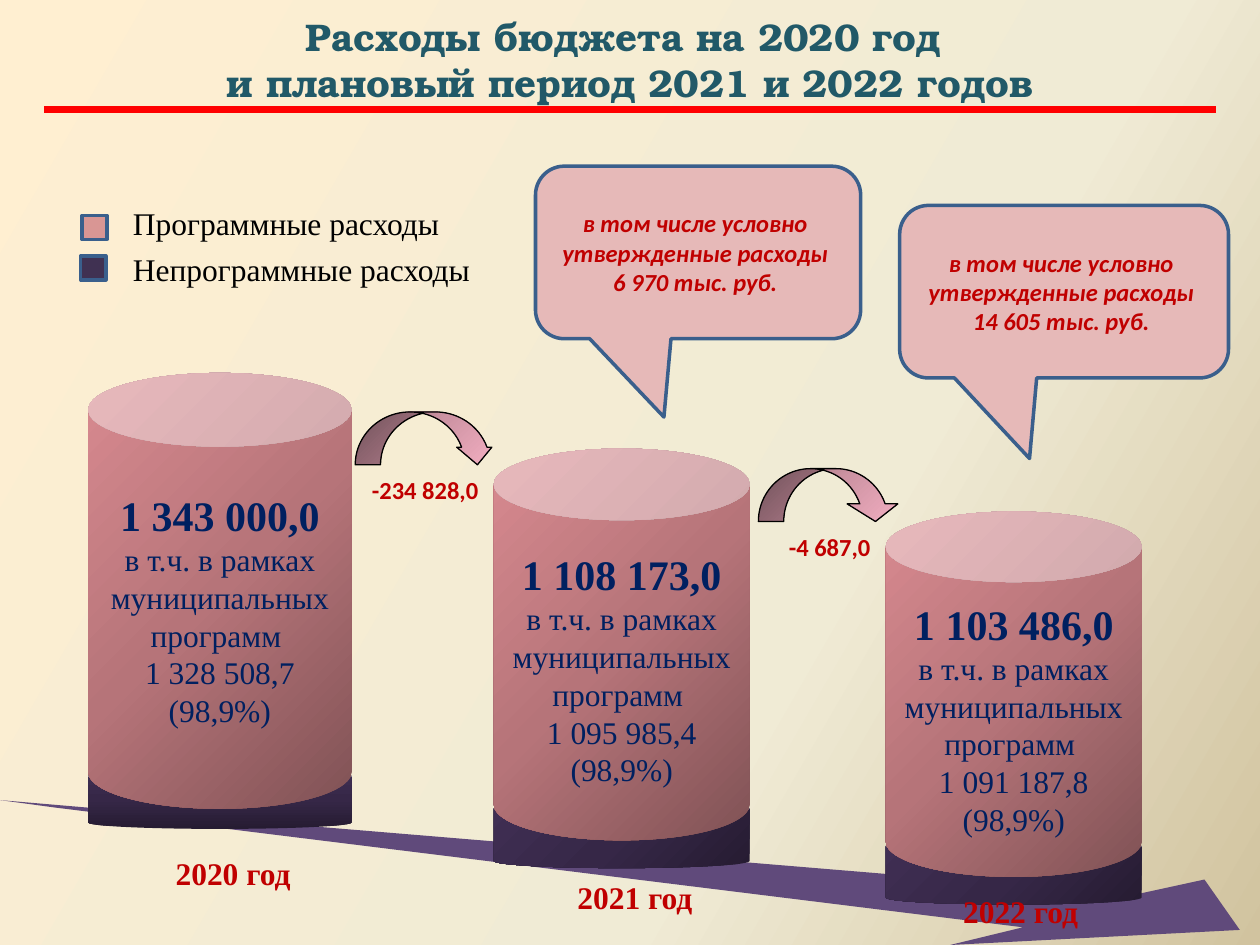
from dataclasses import dataclass

import pptx
import pptx.dml.color
import pptx.enum.shapes
import pptx.enum.text
import pptx.oxml.ns
import pptx.oxml.xmlchemy
import pptx.util
from lxml import etree

Pt = pptx.util.Pt
SHAPE = pptx.enum.shapes.MSO_SHAPE
ALIGN = pptx.enum.text.PP_ALIGN
qn = pptx.oxml.ns.qn


@dataclass(frozen=True)
class Theme:
    serif: str = "Times New Roman"
    sans: str = "Calibri"
    heading: str = "TeX Gyre Bonum"
    title_size: int = 22
    total_size: int = 24
    body_size: int = 18
    note_size: int = 14
    title: str = "215968"
    accent: str = "C00000"
    body: str = "002060"
    black: str = "000000"
    rule: str = "FF0000"
    outline: str = "3A5F8C"
    callout: str = "E6B9B8"
    ribbon: str = "604A7B"
    program: str = "D99694"
    other: str = "403152"
    background: tuple = ((0, "FFEFD1"), (65, "F0EBD5"), (100, "D1C39F"))
    program_can: tuple = ((0, "805255"), (50, "B67479"), (100, "D88A90"))
    other_can: tuple = ((0, "261C32"), (50, "362747"), (100, "402F54"))
    arrow: tuple = ((0, "906772"), (50, "CD93A3"), (100, "F3AEC1"))


T = Theme()

# year, left, width, program top and height, cap, text shift,
# other top and height, gradient angle, label left and top, total, share lines
YEARS = [
    ("2020 год", 50.4, 150.5, 213.1, 249.1, 0.28, 0, 439.9, 33.8, 270, 85, 484.6,
     "1 343 000,0", "1 328 508,7"),
    ("2021 год", 282.2, 146.2, 256.3, 223.9, 0.28, 7, 457.9, 38.2, 225, 314.6, 498.2,
     "1 108 173,0", "1 095 985,4"),
    ("2022 год", 506.2, 146.2, 292.3, 208.8, 0.276, 7, 479.5, 37.4, 225, 535, 506.2,
     "1 103 486,0", "1 091 187,8"),
]
CHANGES = [
    ("-234 828,0", 203, 235.4, 79.9, 0.667),
    ("-4 687,0", 433.4, 267.8, 81.4, 0.96),
]
CALLOUTS = [
    ("6 970 тыс. руб. ", 306, 95, 185.8, 0.954),
    ("14 605 тыс. руб. ", 514.1, 117.4, 187.9, 0.967),
]
LEGEND = [
    ("Программные расходы", T.program, 46.8, 123.1, 127.4),
    ("Непрограммные расходы", T.other, 46.1, 146.2, 153.7),
]
RIBBON = [(67.7, 463), (0, 457.2), (31.7, 461.5), (584.6, 529.9), (542.9, 540),
          (708.5, 531.4), (688.3, 502.6), (648.7, 511.2)]


def rgb(value):
    return pptx.dml.color.RGBColor.from_string(value)


def set_gradient(fill, element, stops, angle):
    """Fill with any number of stops; the angle runs clockwise."""
    fill.gradient()
    fill.gradient_angle = 360 - angle
    gs_list = element.find(".//" + qn("a:gsLst"))
    for gs in list(gs_list):
        gs_list.remove(gs)
    for position, color in stops:
        gs = etree.SubElement(gs_list, qn("a:gs"), pos=str(position * 1000))
        etree.SubElement(gs, qn("a:srgbClr"), val=color)


def write(tf, lines, *, size, color, font=T.serif, bold=False, italic=False,
          align=ALIGN.CENTER):
    """Add lines as paragraphs, starting in the empty first one."""
    for line in lines:
        p = tf.add_paragraph() if tf.text else tf.paragraphs[0]
        p.alignment = align
        r = p.add_run()
        r.text = line
        r.font.name, r.font.size = font, Pt(size)
        r.font.bold, r.font.italic = bold, italic
        r.font.color.rgb = rgb(color)


def add_label(s, text, x, y, w, h, **fmt):
    tf = s.shapes.add_textbox(Pt(x), Pt(y), Pt(w), Pt(h)).text_frame
    tf.margin_left = tf.margin_right = 0
    tf.word_wrap = False
    tf.vertical_anchor = pptx.enum.text.MSO_ANCHOR.MIDDLE
    write(tf, [text], **fmt)


def style(sp, fill, line=None, width=2, angle=0):
    """Apply a solid colour or a tuple of gradient stops, and an outline."""
    sp.shadow.inherit = False
    if isinstance(fill, tuple):
        set_gradient(sp.fill, sp._element, fill, angle)
    else:
        sp.fill.solid()
        sp.fill.fore_color.rgb = rgb(fill)
    if line:
        sp.line.color.rgb = rgb(line)
        sp.line.width = Pt(width)
    else:
        sp.line.fill.background()


def add_shape(s, kind, x, y, w, h, fill, adjust=(), **look):
    sp = s.shapes.add_shape(kind, Pt(x), Pt(y), Pt(w), Pt(h))
    for i, value in enumerate(adjust):
        sp.adjustments[i] = value
    style(sp, fill, **look)
    sp.text_frame.vertical_anchor = pptx.enum.text.MSO_ANCHOR.MIDDLE
    return sp


def add_title(s):
    sp = s.shapes.title
    sp.left, sp.top, sp.width, sp.height = Pt(0), Pt(4), Pt(720), Pt(60)
    tf = sp.text_frame
    tf.auto_size = pptx.enum.text.MSO_AUTO_SIZE.NONE
    tf.vertical_anchor = pptx.enum.text.MSO_ANCHOR.MIDDLE
    write(tf, ["Расходы бюджета на 2020 год ", "и плановый период 2021 и 2022 годов"],
          size=T.title_size, color=T.title, font=T.heading, bold=True)
    rule = s.shapes.add_connector(pptx.enum.shapes.MSO_CONNECTOR.STRAIGHT,
                                  Pt(25.2), Pt(62.6), Pt(694.8), Pt(62.6))
    rule.line.color.rgb = rgb(T.rule)
    rule.line.width = Pt(3.75)
    etree.SubElement(rule._element.spPr, qn("a:effectLst"))


def add_ribbon(s):
    points = [(Pt(x), Pt(y)) for x, y in RIBBON]
    builder = s.shapes.build_freeform(*points[0])
    builder.add_line_segments(points[1:], close=True)
    style(builder.convert_to_shape(), T.ribbon)


def add_year(s, year, x, w, top, h, cap, shift, other_top, other_h, angle,
             label_x, label_y, total, program):
    add_shape(s, SHAPE.CAN, x, other_top, w, other_h, T.other_can, [0.214], angle=angle)
    tf = add_shape(s, SHAPE.CAN, x, top, w, h, T.program_can, [cap], angle=225).text_frame
    tf.word_wrap = False
    tf.margin_top = Pt(3.6 + shift)
    write(tf, [total], size=T.total_size, color=T.body, bold=True)
    write(tf, ["в т.ч. в рамках", "муниципальных", "программ ", program, "(98,9%)"],
          size=T.body_size, color=T.body)
    add_label(s, year, label_x, label_y, 96.5, 28.8,
              size=T.body_size, color=T.accent, bold=True)


def add_change(s, text, x, y, w, head):
    add_shape(s, SHAPE.CURVED_DOWN_ARROW, x, y, w, 30.2, T.arrow, [0.48, head, 0.333],
              line=T.black, width=0.75, angle=45)
    add_label(s, text, x, y + 32, w, 25,
              size=T.note_size, color=T.accent, font=T.sans, bold=True)


def add_callout(s, amount, x, y, w, tip):
    sp = add_shape(s, SHAPE.ROUNDED_RECTANGULAR_CALLOUT, x, y, w, 98.6, T.callout,
                   [-0.105, tip, 0.167], line=T.outline)
    sp.text_frame.word_wrap = True
    write(sp.text_frame, ["в том числе условно ", "утвержденные расходы ", amount],
          size=T.note_size, color=T.accent, font=T.sans, bold=True, italic=True)


def add_legend_row(s, text, color, x, y, middle):
    add_shape(s, SHAPE.RECTANGLE, x, y, 14.4, 13.7, color, line=T.outline)
    add_label(s, text, 76, middle - 14.4, 200, 28.8,
              size=T.body_size, color=T.black, align=ALIGN.LEFT)


def main():
    prs = pptx.Presentation()
    prs.slide_width, prs.slide_height = Pt(720), Pt(540)
    s = prs.slides.add_slide(prs.slide_layouts[5])
    set_gradient(s.background.fill, s._element, T.background, 30)
    add_title(s)
    add_ribbon(s)
    for add, rows in ((add_year, YEARS), (add_change, CHANGES),
                      (add_callout, CALLOUTS), (add_legend_row, LEGEND)):
        for row in rows:
            add(s, *row)
    prs.save("out.pptx")


if __name__ == "__main__":
    main()
